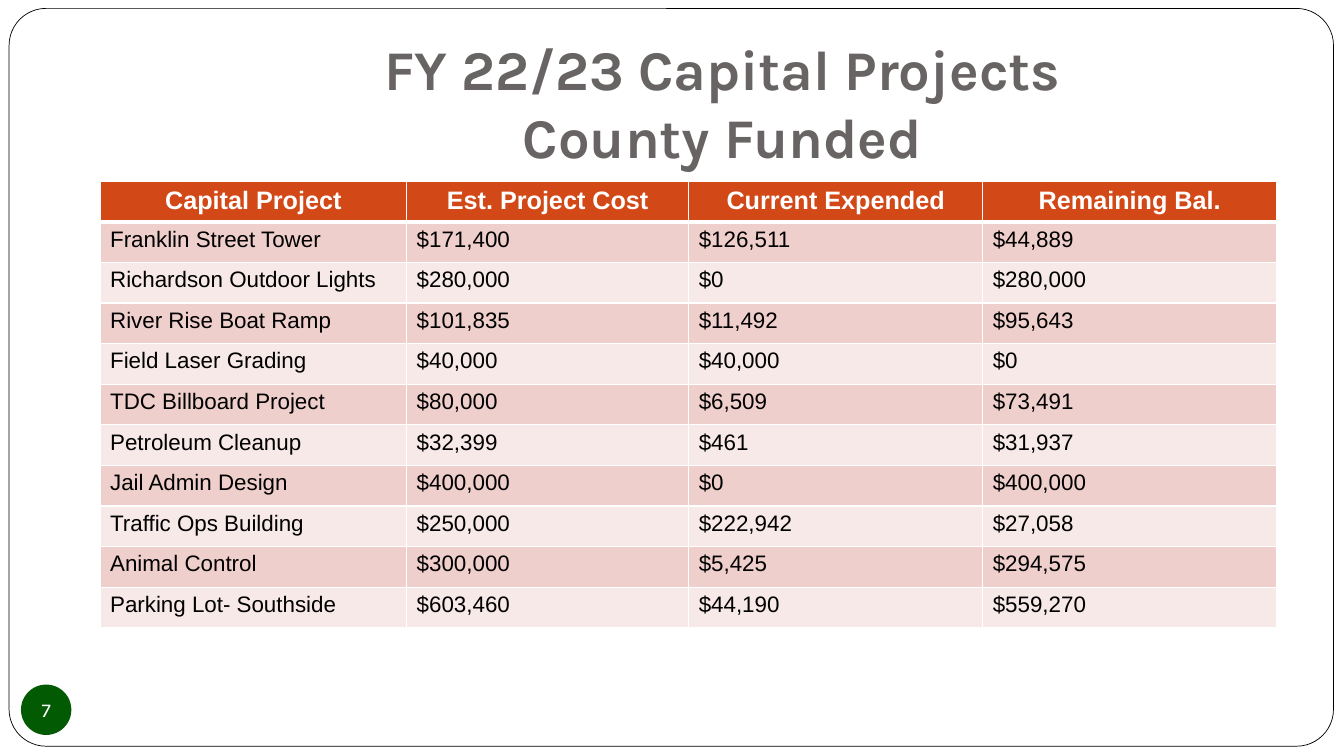
from dataclasses import dataclass

from lxml import etree
from pptx import Presentation
from pptx.dml.color import RGBColor
from pptx.enum.shapes import MSO_SHAPE
from pptx.enum.text import MSO_ANCHOR, MSO_AUTO_SIZE, PP_ALIGN
from pptx.oxml.ns import qn
from pptx.util import Emu, Pt

PX = 6350  # 144 px to the inch
SLIDE_W, SLIDE_H = 1920, 1080
TITLE_ONLY = 5

ROUNDED, OVAL = MSO_SHAPE.ROUNDED_RECTANGLE, MSO_SHAPE.OVAL
LEFT, CENTER = PP_ALIGN.LEFT, PP_ALIGN.CENTER
TOP, MIDDLE = MSO_ANCHOR.TOP, MSO_ANCHOR.MIDDLE
NO_AUTOFIT = MSO_AUTO_SIZE.NONE

WHITE = RGBColor(0xFF, 0xFF, 0xFF)
BLACK = RGBColor(0x00, 0x00, 0x00)
GRAY = RGBColor(0x69, 0x64, 0x64)
ORANGE = RGBColor(0xD3, 0x48, 0x17)
GREEN = RGBColor(0x02, 0x5A, 0x02)
BANDS = (RGBColor(0xEF, 0xCF, 0xCC), RGBColor(0xF7, 0xE9, 0xE8))

BODY_FONT, HEADING_FONT = "Arial", "Karla"

COLUMN_WIDTHS = (438, 403, 420, 420)
ROW_HEIGHT = 58
HEADINGS = ("Capital Project", "Est. Project Cost", "Current Expended", "Remaining Bal.")


@dataclass(frozen=True)
class Project:
    name: str
    cost: str
    expended: str
    balance: str

    def values(self) -> tuple[str, ...]:
        return self.name, self.cost, self.expended, self.balance


PROJECTS = (
    Project("Franklin Street Tower", "$171,400", "$126,511", "$44,889"),
    Project("Richardson Outdoor Lights", "$280,000", "$0", "$280,000"),
    Project("River Rise Boat Ramp", "$101,835", "$11,492", "$95,643"),
    Project("Field Laser Grading", "$40,000", "$40,000", "$0"),
    Project("TDC Billboard Project", "$80,000", "$6,509", "$73,491"),
    Project("Petroleum Cleanup", "$32,399", "$461", "$31,937"),
    Project("Jail Admin Design", "$400,000", "$0", "$400,000"),
    Project("Traffic Ops Building", "$250,000", "$222,942", "$27,058"),
    Project("Animal Control", "$300,000", "$5,425", "$294,575"),
    Project("Parking Lot- Southside", "$603,460", "$44,190", "$559,270"),
)


def px(*lengths: int) -> list[Emu]:
    return [Emu(n * PX) for n in lengths]


def write(tf, text: str, *, size: int, color: RGBColor, font: str = BODY_FONT,
          bold: bool = False, align=LEFT) -> None:
    """Fill the first paragraph of tf, with a line break at each newline."""
    p = tf.paragraphs[0]
    p.alignment = align
    for i, line in enumerate(text.split("\n")):
        if i:
            p.add_line_break()
        r = p.add_run()
        r.text = line
        r.font.size = Pt(size)
        r.font.name = font
        r.font.bold = bold
        r.font.color.rgb = color


def set_insets(tf, left: int, top: int, right: int, bottom: int) -> None:
    tf.margin_left, tf.margin_top, tf.margin_right, tf.margin_bottom = px(
        left, top, right, bottom)


def add_panel(slide, kind, left: int, top: int, width: int, height: int, fill: RGBColor):
    sp = slide.shapes.add_shape(kind, *px(left, top, width, height))
    sp.shadow.inherit = False
    sp.fill.solid()
    sp.fill.fore_color.rgb = fill
    return sp


def add_frame(slide) -> None:
    sp = add_panel(slide, ROUNDED, 13, 12, 1892, 1054, WHITE)
    sp.adjustments[0] = 0.05
    sp.line.color.rgb = BLACK
    sp.line.width = Pt(0.5)
    sp.element.getparent().insert(2, sp.element)  # behind the title


def add_title(slide) -> None:
    sp = slide.shapes.title
    sp.left, sp.top, sp.width, sp.height = px(384, 43, 1296, 194)
    tf = sp.text_frame
    tf.word_wrap = True
    tf.auto_size = NO_AUTOFIT
    tf.vertical_anchor = TOP
    set_insets(tf, 14, 7, 14, 14)
    write(tf, "FY 22/23 Capital Projects\nCounty Funded", size=40, color=GRAY,
          font=HEADING_FONT, bold=True, align=CENTER)


def set_borders(cell, top: int, bottom: int) -> None:
    """Draw white cell borders; widths in points, sides always 1."""
    tc_pr = cell._tc.get_or_add_tcPr()
    for side, width in (("lnL", 1), ("lnR", 1), ("lnT", top), ("lnB", bottom)):
        ln = etree.SubElement(tc_pr, qn(f"a:{side}"), w=str(Pt(width)))
        fill = etree.SubElement(ln, qn("a:solidFill"))
        etree.SubElement(fill, qn("a:srgbClr"), val=str(WHITE))


def add_projects_table(slide) -> None:
    rows = [HEADINGS, *(project.values() for project in PROJECTS)]
    table = slide.shapes.add_table(
        len(rows), len(HEADINGS),
        *px(143, 259, sum(COLUMN_WIDTHS), ROW_HEIGHT * len(rows))).table
    for column, width in zip(table.columns, px(*COLUMN_WIDTHS)):
        column.width = width
    for i, values in enumerate(rows):
        header = i == 0
        for j, value in enumerate(values):
            cell = table.cell(i, j)
            set_borders(cell, top=3 if i == 1 else 1, bottom=3 if header else 1)
            cell.fill.solid()
            cell.fill.fore_color.rgb = ORANGE if header else BANDS[(i - 1) % 2]
            write(cell.text_frame, value, size=18 if header else 16,
                  color=WHITE if header else BLACK, bold=header,
                  align=CENTER if header else LEFT)


def add_page_number(slide) -> None:
    sp = add_panel(slide, OVAL, 30, 978, 72, 72, GREEN)
    sp.line.fill.background()
    tf = sp.text_frame
    tf.word_wrap = False
    tf.vertical_anchor = MIDDLE
    set_insets(tf, 0, 0, 0, 0)
    write(tf, "7", size=14, color=WHITE, font=HEADING_FONT, align=CENTER)


def main() -> None:
    prs = Presentation()
    prs.slide_width, prs.slide_height = px(SLIDE_W, SLIDE_H)
    slide = prs.slides.add_slide(prs.slide_layouts[TITLE_ONLY])
    add_frame(slide)
    add_title(slide)
    add_projects_table(slide)
    add_page_number(slide)
    prs.save("out.pptx")


if __name__ == "__main__":
    main()
